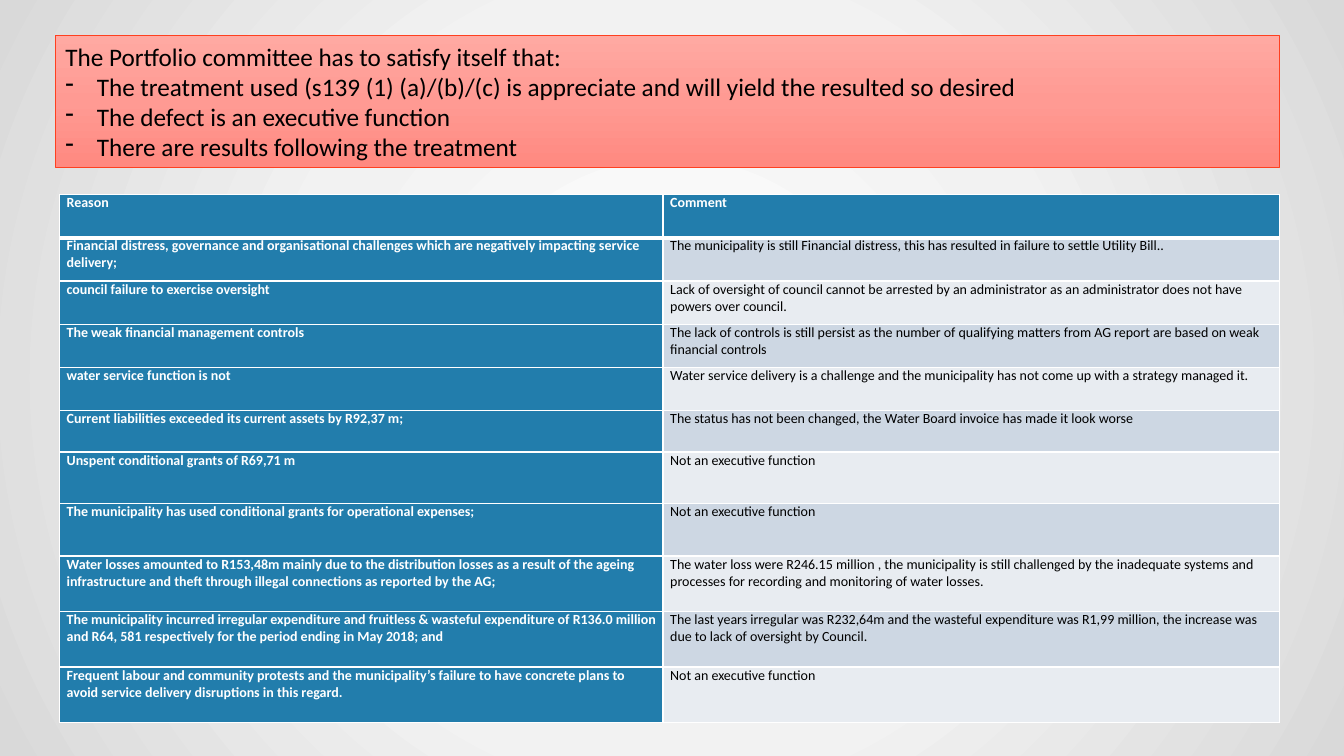
from lxml import etree
from pptx import Presentation
from pptx.dml.color import RGBColor
from pptx.enum import shapes, text
from pptx.oxml import parse_xml
from pptx.oxml.ns import qn
from pptx.util import Cm, Pt

NS = 'xmlns:a="http://schemas.openxmlformats.org/drawingml/2006/main"'
FONT = "Calibri"
WHITE, BLACK, BLUE = "FFFFFF", "000000", "227DAC"
BANDS = ("CDD7E3", "E8ECF1")

TITLE = "The Portfolio committee has to satisfy itself that:"
CHECKS = (
    "The treatment used (s139 (1) (a)/(b)/(c) is appreciate and will yield the resulted so desired",
    "The defect is an executive function",
    "There are results following the treatment",
)
WIDTHS = (15.21, 15.54)
ROWS = (
    (1.09, "Reason", "Comment"),
    (1.09, "Financial distress, governance and organisational challenges which are "
           "negatively impacting service delivery;",
     "The municipality is still Financial distress, this has resulted in failure "
     "to settle Utility Bill.."),
    (1.09, "council failure to exercise oversight",
     "Lack of oversight of council cannot be arrested by an administrator as an "
     "administrator does not have powers over council."),
    (1.09, "The weak financial management controls",
     "The lack of controls is still persist as the number of qualifying matters "
     "from AG report are based on weak financial controls"),
    (1.09, "water service function is not",
     "Water service delivery is a challenge and the municipality has not come up "
     "with a strategy managed it."),
    (1.04, "Current liabilities exceeded its current assets by R92,37 m;",
     "The status has not been changed, the Water Board invoice has made it look worse"),
    (1.3, "Unspent conditional grants of R69,71 m", "Not an executive function"),
    (1.32, "The municipality has used conditional grants for operational expenses;",
     "Not an executive function"),
    (1.4, "Water losses amounted to R153,48m mainly due to the distribution losses as "
          "a result of the ageing infrastructure and theft through illegal connections "
          "as reported by the AG;",
     "The water loss were R246.15 million , the municipality is still challenged by the "
     "inadequate systems and processes for recording and monitoring of water losses."),
    (1.4, "The municipality incurred irregular expenditure and fruitless & wasteful "
          "expenditure of R136.0 million and R64, 581 respectively for the period "
          "ending in May 2018; and",
     "The last years irregular was R232,64m and the wasteful expenditure was R1,99 "
     "million, the increase was due to lack of oversight by Council."),
    (1.4, "Frequent labour and community protests and the municipality’s failure to have "
          "concrete plans to avoid service delivery disruptions in this regard.",
     "Not an executive function"),
)


def rgb(code):
    return RGBColor.from_string(code)


def style(para, size, color, bold=False):
    for run in para.runs:
        font = run.font
        font.name, font.size, font.bold = FONT, Pt(size), bold
        font.color.rgb = rgb(color)


def blend(fill, props, colors, shade):
    """Fill with evenly spaced colours; shade is the XML for their direction."""
    fill.solid()
    step = 100000 // (len(colors) - 1)
    stops = "".join(f'<a:gs pos="{i * step}"><a:srgbClr val="{c}"/></a:gs>'
                    for i, c in enumerate(colors))
    old = props.find(qn("a:solidFill"))
    props.replace(old, parse_xml(
        f'<a:gradFill {NS} rotWithShape="1"><a:gsLst>{stops}</a:gsLst>{shade}</a:gradFill>'))


def paint(slide):
    back = slide.background.fill
    back.solid()
    props = slide.element.find(".//" + qn("p:bgPr"))
    blend(back, props, ("FFFFFF", "F2F2F2", "D9D9D9"),
          '<a:path path="circle"><a:fillToRect l="50000" t="50000" r="50000" b="50000"/></a:path>')


def dash(para):
    props = para._p.get_or_add_pPr()
    props.set("marL", str(Cm(0.79)))
    props.set("indent", str(-Cm(0.79)))
    etree.SubElement(props, qn("a:buChar")).set("char", "-")


def add_box(slide):
    box = slide.shapes.add_shape(shapes.MSO_SHAPE.RECTANGLE,
                                 Cm(1.4), Cm(0.89), Cm(30.84), Cm(3.33))
    box.shadow.inherit = False
    blend(box.fill, box._element.spPr, ("FFA9A2", "FF9A93", "FF8980"),
          '<a:lin ang="5400000" scaled="0"/>')
    box.line.color.rgb = rgb("FE4020")
    box.line.width = Pt(0.5)
    frame = box.text_frame
    frame.word_wrap = True
    frame.auto_size = text.MSO_AUTO_SIZE.SHAPE_TO_FIT_TEXT
    frame.text = "\n".join((TITLE, *CHECKS))
    for i, para in enumerate(frame.paragraphs):
        para.alignment = text.PP_ALIGN.LEFT
        style(para, 18, BLACK)
        if i:
            dash(para)


def edge(cell, top, bottom):
    """Draw white cell borders; top and bottom are widths in points."""
    props = cell._tc.get_or_add_tcPr()
    for i, (side, width) in enumerate(zip("LRTB", (1, 1, top, bottom))):
        props.insert(i, parse_xml(
            f'<a:ln{side} {NS} w="{Pt(width)}"><a:solidFill><a:srgbClr val="{WHITE}"/>'
            f'</a:solidFill></a:ln{side}>'))


def add_grid(slide):
    grid = slide.shapes.add_table(len(ROWS), len(WIDTHS), Cm(1.5), Cm(4.9),
                                  Cm(sum(WIDTHS)), Cm(sum(r[0] for r in ROWS))).table
    for col, width in zip(grid.columns, WIDTHS):
        col.width = Cm(width)
    for r, (height, *words) in enumerate(ROWS):
        grid.rows[r].height = Cm(height)
        for c, word in enumerate(words):
            cell = grid.cell(r, c)
            head = r == 0 or c == 0
            cell.text = word
            cell.margin_left = cell.margin_right = Cm(0.18)
            cell.margin_top = cell.margin_bottom = 0
            cell.fill.solid()
            cell.fill.fore_color.rgb = rgb(BLUE if head else BANDS[(r - 1) % 2])
            edge(cell, 3 if r == 1 else 1, 3 if r == 0 else 1)
            style(cell.text_frame.paragraphs[0], 10, WHITE if head else BLACK, head)


def main():
    deck = Presentation()
    deck.slide_width, deck.slide_height = Cm(33.87), Cm(19.05)
    slide = deck.slides.add_slide(deck.slide_layouts[6])
    paint(slide)
    add_grid(slide)
    add_box(slide)
    deck.save("out.pptx")


if __name__ == "__main__":
    main()
